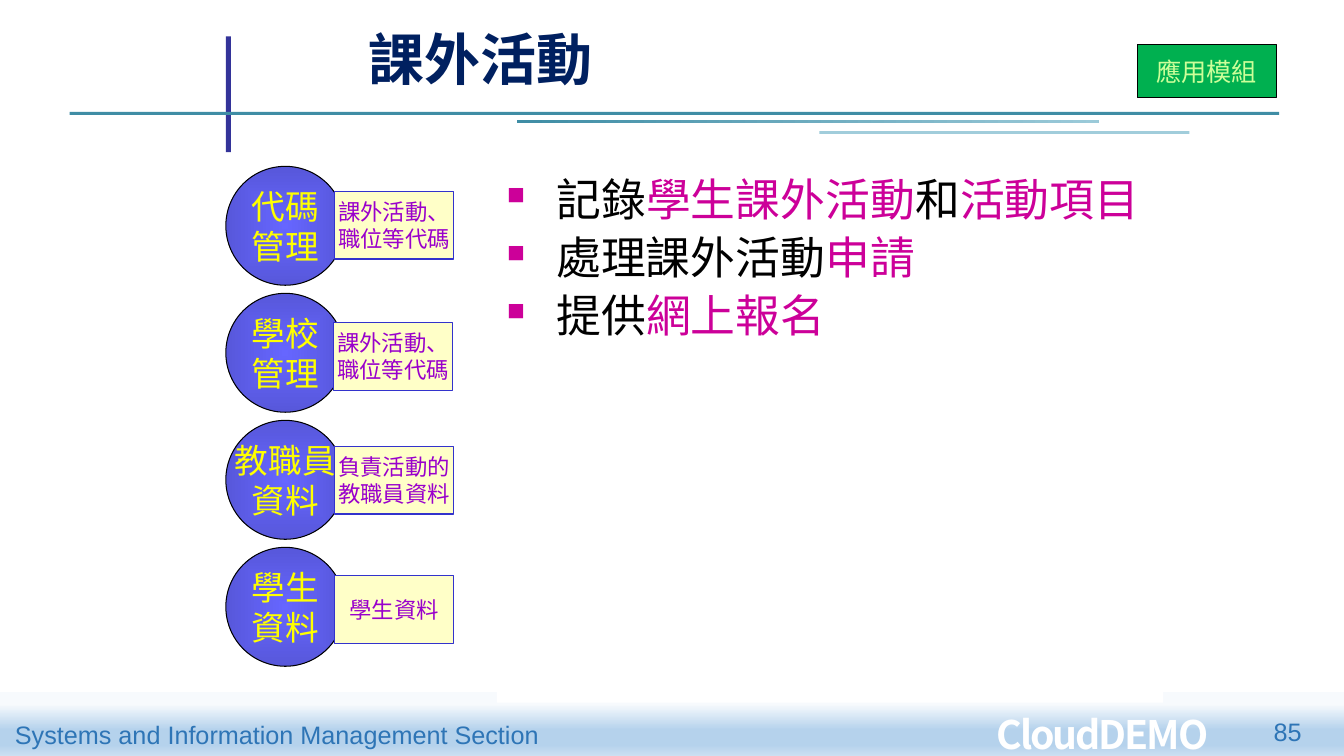
from dataclasses import dataclass
from typing import NamedTuple

from lxml import etree
from pptx import Presentation
from pptx.dml.color import RGBColor
from pptx.enum.shapes import MSO_SHAPE
from pptx.enum.text import MSO_ANCHOR, PP_ALIGN
from pptx.oxml.ns import qn
from pptx.util import Inches, Pt

RECT, OVAL = MSO_SHAPE.RECTANGLE, MSO_SHAPE.OVAL
LEFT, CENTER, RIGHT = PP_ALIGN.LEFT, PP_ALIGN.CENTER, PP_ALIGN.RIGHT
TOP, MIDDLE, BOTTOM = MSO_ANCHOR.TOP, MSO_ANCHOR.MIDDLE, MSO_ANCHOR.BOTTOM
CELL = Inches(0.1)
COLS, ROWS = 133.33, 75
CJK, LATIN = "Noto Sans CJK SC", "Arial"
BLACK, WHITE, MAGENTA, BLUE = "000000", "FFFFFF", "CC0099", "2E75B6"


class Box(NamedTuple):
    col: float
    row: float
    cols: float
    rows: float

    def emu(self) -> list[int]:
        return [round(v * CELL) for v in self]


class Gradient(NamedTuple):
    stops: tuple[tuple[int, str], ...]
    angle: int | None


@dataclass
class Style:
    size: int
    color: str
    font: str = CJK
    bold: bool = False
    align: PP_ALIGN = LEFT
    anchor: MSO_ANCHOR = TOP
    wrap: bool = False
    spacing: int = 0


@dataclass
class Bar:
    box: Box
    fill: str | Gradient


@dataclass
class Label:
    box: Box
    text: str
    style: Style


@dataclass
class Module:
    name: tuple[str, ...]
    data: tuple[str, ...]
    card_col: float
    card_drop: float


BARS = [
    Bar(Box(0, 68.7, COLS, 6.4), Gradient(
        ((18, "F7FAFD"), (58, "B5D2EC"), (81, "B5D2EC"), (100, "CEE1F2")), 90)),
    Bar(Box(22.4, 3.6, 0.5, 11.5), "333399"),
    Bar(Box(6.9, 11.1, 120, 0.3), "3F8DA5"),
    Bar(Box(51.3, 11.9, 57.7, 0.3), Gradient(((0, "3F8DA5"), (100, "9BCAD9")), 0)),
    Bar(Box(81.3, 13, 36.7, 0.3), "A1CDDB"),
]
LABELS = [
    Label(Box(0.5, 70.9, 54.5, 4), "Systems and Information Management Section",
          Style(18, BLUE, LATIN)),
    Label(Box(97.9, 70, 27.3, 5.7), "CloudDEMO",
          Style(28, WHITE, bold=True, wrap=True, spacing=-150)),
    Label(Box(35.6, 1.3, 28, 8.3), "課外活動",
          Style(40, "002060", LATIN, bold=True, anchor=BOTTOM, wrap=True)),
    Label(Box(117, 70.6, 13.1, 5), "85", Style(18, BLUE, LATIN, align=RIGHT, wrap=True)),
]
MODULES = [
    Module(("代碼", "管理"), ("課外活動、", "職位等代碼"), 33.2, 2.5),
    Module(("學校", "管理"), ("課外活動、", "職位等代碼"), 33.1, 2.9),
    Module(("教職員", "資料"), ("負責活動的", "教職員資料"), 33.2, 2.6),
    Module(("學生", "資料"), ("學生資料",), 33.2, 2.8),
]
POINTS = [
    (("記錄", BLACK), ("學生課外活動", MAGENTA), ("和", BLACK), ("活動項目", MAGENTA)),
    (("處理課外活動", BLACK), ("申請", MAGENTA)),
    (("提供", BLACK), ("網上報名", MAGENTA)),
]
MODULE_COL, MODULE_ROW, MODULE_PITCH = 22.4, 16.5, 12.6
CIRCLE_SIZE, CARD_ROWS = 11.8, 6.7
CIRCLE_FILL = Gradient(((0, "6666FF"), (100, "5757DA")), None)
CIRCLE_TEXT = Style(24, "FFFF00", align=CENTER, anchor=MIDDLE)
CARD_TEXT = Style(16, "9900CC", align=CENTER, anchor=MIDDLE)
BADGE_TEXT = Style(18, "CCFF99", align=CENTER, anchor=MIDDLE)
POINT_TEXT = Style(32, BLACK, wrap=True)


def rgb(value: str) -> RGBColor:
    return RGBColor.from_string(value)


def add_node(parent, tag: str, **attrs):
    return etree.SubElement(parent, qn(tag), attrs)


def apply_gradient(sp, gradient: Gradient) -> None:
    sp.fill.gradient()
    grad = sp._element.spPr.find(qn("a:gradFill"))
    for child in list(grad):
        grad.remove(child)
    stops = add_node(grad, "a:gsLst")
    for pos, color in gradient.stops:
        stop = add_node(stops, "a:gs", pos=str(pos * 1000))
        add_node(stop, "a:srgbClr", val=color)
    if gradient.angle is None:
        path = add_node(grad, "a:path", path="shape")
        add_node(path, "a:fillToRect", l="50000", t="50000", r="50000", b="50000")
    else:
        add_node(grad, "a:lin", ang=str(gradient.angle * 60000), scaled="0")


def add_box(s, kind: MSO_SHAPE, box: Box, fill: str | Gradient, line: str = ""):
    sp = s.shapes.add_shape(kind, *box.emu())
    sp.shadow.inherit = False
    if isinstance(fill, Gradient):
        apply_gradient(sp, fill)
    else:
        sp.fill.solid()
        sp.fill.fore_color.rgb = rgb(fill)
    if line:
        sp.line.color.rgb = rgb(line)
        sp.line.width = Pt(0.75)
    else:
        sp.line.fill.background()
    return sp


def set_font(p, style: Style) -> None:
    p.alignment = style.align
    p.font.size = Pt(style.size)
    p.font.name = style.font
    p.font.bold = style.bold
    p.font.color.rgb = rgb(style.color)
    props = p._p.get_or_add_pPr().find(qn("a:defRPr"))
    add_node(props, "a:ea", typeface=CJK)
    if style.spacing:
        props.set("spc", str(style.spacing))


def set_frame(sp, style: Style):
    tf = sp.text_frame
    tf.word_wrap = style.wrap
    tf.vertical_anchor = style.anchor
    return tf


def write_lines(sp, lines: tuple[str, ...], style: Style) -> None:
    tf = set_frame(sp, style)
    for i, line in enumerate(lines):
        p = tf.add_paragraph() if i else tf.paragraphs[0]
        p.text = line
        set_font(p, style)


def add_bullet(p) -> None:
    props = p._p.get_or_add_pPr()
    indent = Inches(0.49)
    props.set("marL", str(indent))
    props.set("indent", str(-indent))
    add_node(add_node(props, "a:buClr"), "a:srgbClr", val=MAGENTA)
    add_node(props, "a:buSzPct", val="55000")
    add_node(props, "a:buChar", char="■")


def add_points(s) -> None:
    sp = add_box(s, RECT, Box(49.3, 16.5, 66.1, 53.2), WHITE)
    tf = set_frame(sp, POINT_TEXT)
    for i, parts in enumerate(POINTS):
        p = tf.add_paragraph() if i else tf.paragraphs[0]
        add_bullet(p)
        set_font(p, POINT_TEXT)
        p.space_before = Pt(3 if i else 0)
        for text, color in parts:
            r = p.add_run()
            r.text = text
            r.font.color.rgb = rgb(color)


def add_module(s, module: Module, row: float) -> None:
    circle = add_box(s, OVAL, Box(MODULE_COL, row, CIRCLE_SIZE, CIRCLE_SIZE), CIRCLE_FILL, BLACK)
    write_lines(circle, module.name, CIRCLE_TEXT)
    card_box = Box(module.card_col, row + module.card_drop, CIRCLE_SIZE, CARD_ROWS)
    card = add_box(s, RECT, card_box, "FFFFC8", "3333CC")
    write_lines(card, module.data, CARD_TEXT)


def main() -> None:
    prs = Presentation()
    prs.slide_width, prs.slide_height = round(COLS * CELL), ROWS * CELL
    s = prs.slides.add_slide(prs.slide_layouts[6])
    for bar in BARS:
        add_box(s, RECT, bar.box, bar.fill)
    add_points(s)
    for label in LABELS:
        write_lines(s.shapes.add_textbox(*label.box.emu()), (label.text,), label.style)
    badge = add_box(s, RECT, Box(112.8, 4.4, 13.8, 5.3), "00B050", BLACK)
    write_lines(badge, ("應用模組",), BADGE_TEXT)
    for i, module in enumerate(MODULES):
        add_module(s, module, MODULE_ROW + i * MODULE_PITCH)
    prs.save("out.pptx")


if __name__ == "__main__":
    main()
